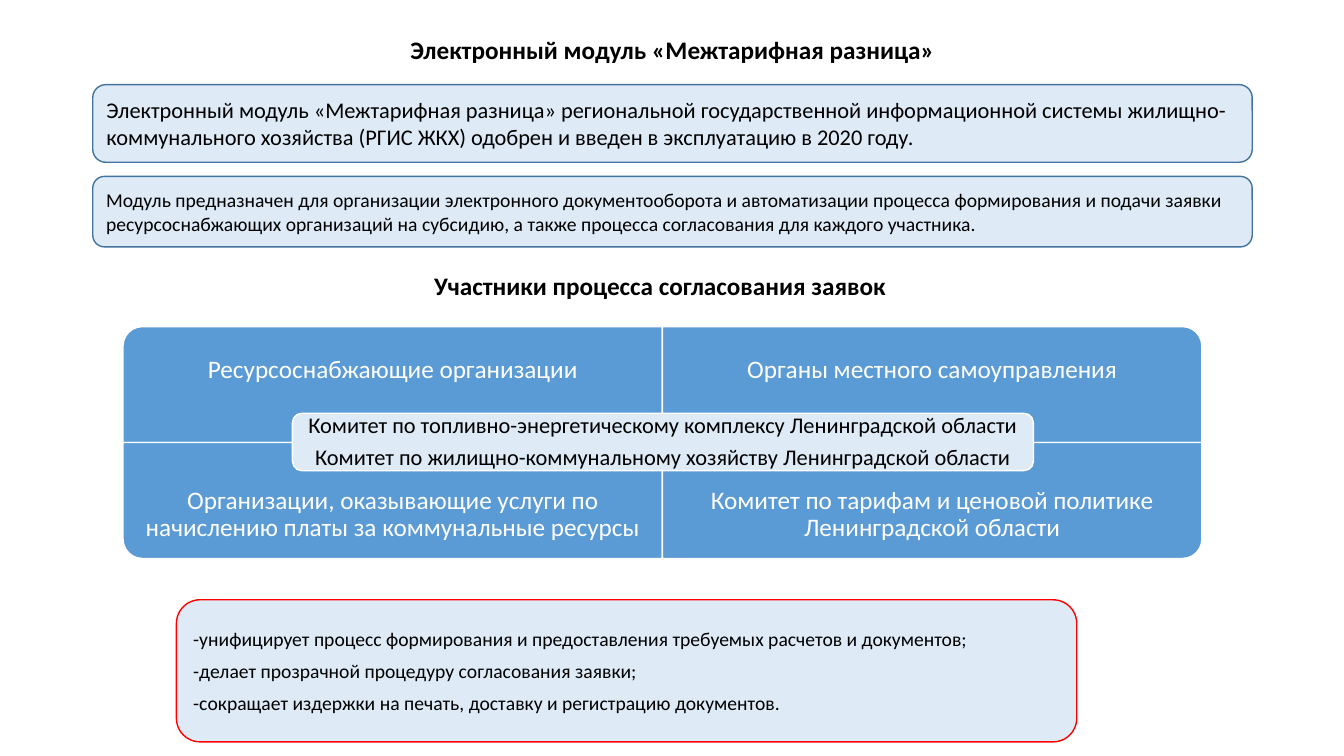
from dataclasses import dataclass

from pptx import Presentation
from pptx.dml.color import RGBColor
from pptx.enum import shapes, text
from pptx.util import Inches, Pt


@dataclass(frozen=True)
class Theme:
    font: str = "Calibri"
    ink: str = "000000"
    white: str = "FFFFFF"
    quadrant: str = "5B9BD5"
    panel: str = "DEEBF7"
    panel_edge: str = "43739E"
    accent: str = "FF0000"
    heading_size: int = 18
    lead_size: int = 16
    body_size: int = 14


class ModuleSlide:
    def __init__(self, slide, theme):
        self.slide = slide
        self.theme = theme

    def set_text(self, frame, lines, size, color, align, bold=False,
                 inset=None, spacing=1.0, after=0):
        frame.word_wrap = True
        frame.vertical_anchor = text.MSO_ANCHOR.MIDDLE
        if inset is not None:
            frame.margin_left = frame.margin_right = Inches(inset)
            frame.margin_top = frame.margin_bottom = Inches(inset)
        for index, line in enumerate(lines):
            paragraph = frame.add_paragraph() if index else frame.paragraphs[0]
            paragraph.text = line
            paragraph.alignment = align
            paragraph.line_spacing = spacing
            paragraph.space_after = Pt(after)
            paragraph.font.name = self.theme.font
            paragraph.font.size = Pt(size)
            paragraph.font.bold = bold
            paragraph.font.color.rgb = RGBColor.from_string(color)

    def block(self, preset, left, top, width, height, fill, edge):
        block = self.slide.shapes.add_shape(
            preset, Inches(left), Inches(top), Inches(width), Inches(height))
        block.shadow.inherit = False
        block.fill.solid()
        block.fill.fore_color.rgb = RGBColor.from_string(fill)
        block.line.color.rgb = RGBColor.from_string(edge)
        block.line.width = Pt(1)
        return block

    def panel(self, left, top, width, height, edge, lines=(), size=0, after=0):
        panel = self.block(shapes.MSO_SHAPE.ROUNDED_RECTANGLE,
                           left, top, width, height, self.theme.panel, edge)
        self.set_text(panel.text_frame, lines, size, self.theme.ink,
                      text.PP_ALIGN.LEFT, after=after)

    def label(self, left, top, width, height, lines, size, color, **style):
        label = self.slide.shapes.add_textbox(
            Inches(left), Inches(top), Inches(width), Inches(height))
        self.set_text(label.text_frame, lines, size, color,
                      text.PP_ALIGN.CENTER, spacing=0.9, **style)

    def heading(self, left, top, width, words):
        self.label(left, top, width, 0.51, [words],
                   self.theme.heading_size, self.theme.ink, bold=True)

    def quadrant(self, left, top, width, height, rotation):
        """Turn a one-corner-rounded block so that it still fills the given area."""
        sideways = rotation in (90, 270)
        w, h = (height, width) if sideways else (width, height)
        block = self.block(shapes.MSO_SHAPE.ROUND_1_RECTANGLE,
                           left + (width - w) / 2, top + (height - h) / 2, w, h,
                           self.theme.quadrant, self.theme.white)
        block.rotation = rotation

    def participants(self, left, top, width, height, entries):
        """Lay out four participants as a 2 x 2 matrix with rounded outer corners."""
        label_height = 0.86
        for index, (words, rotation) in enumerate(entries):
            row, column = divmod(index, 2)
            x, y = left + column * width, top + row * height
            self.quadrant(x, y, width, height, rotation)
            self.label(x, y + row * (height - label_height), width, label_height,
                       [words], self.theme.heading_size, self.theme.white,
                       inset=0.14, after=6.3)


def main():
    deck = Presentation()
    deck.slide_width, deck.slide_height = Inches(13.33), Inches(7.5)
    theme = Theme()
    page = ModuleSlide(deck.slides.add_slide(deck.slide_layouts[6]), theme)

    page.heading(0.92, 0.25, 11.5, "Электронный модуль «Межтарифная разница»")
    page.participants(1.22, 3.24, 5.35, 1.15, [
        ("Ресурсоснабжающие организации", 270),
        ("Органы местного самоуправления", 0),
        ("Организации, оказывающие услуги по начислению платы за коммунальные ресурсы", 180),
        ("Комитет по тарифам и ценовой политике Ленинградской области", 90),
    ])
    page.panel(2.9, 4.1, 7.35, 0.57, theme.white)
    page.label(2.93, 4.13, 7.29, 0.52, [
        "Комитет по топливно-энергетическому комплексу Ленинградской области",
        "Комитет по жилищно-коммунальному хозяйству Ленинградской области",
    ], theme.lead_size, theme.ink, inset=0.07, after=5.6)

    page.panel(0.92, 1.75, 11.5, 0.7, theme.panel_edge, [
        "Модуль предназначен для организации электронного документооборота и "
        "автоматизации процесса формирования и подачи заявки ресурсоснабжающих "
        "организаций на субсидию, а также процесса согласования для каждого участника.",
    ], theme.body_size)
    page.panel(0.92, 0.84, 11.5, 0.77, theme.panel_edge, [
        "Электронный модуль «Межтарифная разница» региональной государственной "
        "информационной системы жилищно-коммунального хозяйства (РГИС ЖКХ) "
        "одобрен и введен в эксплуатацию в 2020 году.",
    ], theme.lead_size)
    page.panel(1.75, 5.95, 8.93, 1.41, theme.accent, [
        "-унифицирует процесс формирования и предоставления требуемых расчетов и документов;",
        "-делает прозрачной процедуру согласования заявки;",
        "-сокращает издержки на печать, доставку и регистрацию документов.",
    ], theme.body_size, after=6)
    page.heading(2.47, 2.6, 8.21, "Участники процесса согласования заявок ")

    deck.save("out.pptx")


if __name__ == "__main__":
    main()
